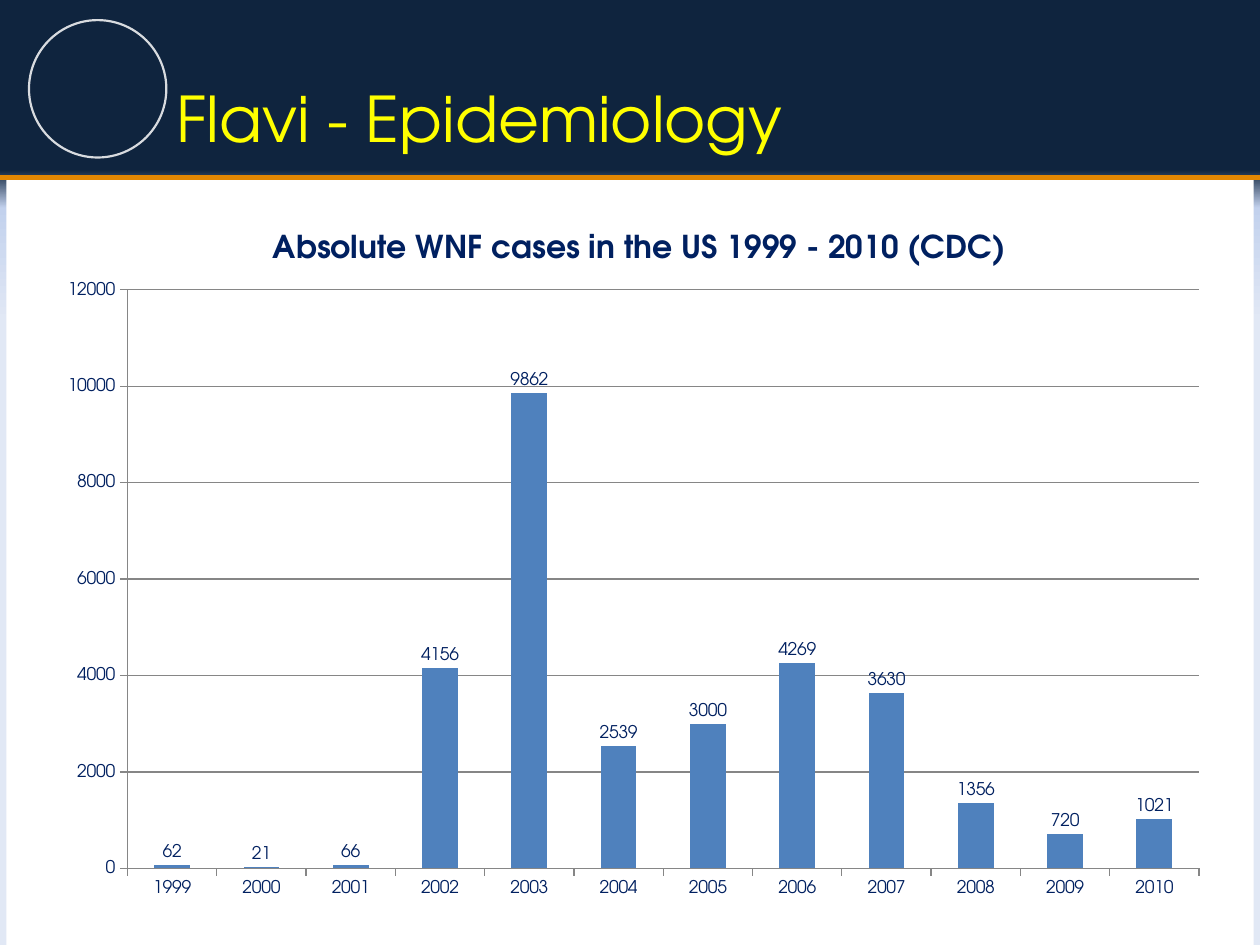
"""Build the slide on West Nile fever cases in the US."""
from dataclasses import dataclass

from lxml import etree
from pptx import Presentation
from pptx.chart.data import CategoryChartData
from pptx.dml.color import RGBColor
from pptx.enum import chart as ch, shapes, text
from pptx.oxml import ns
from pptx.util import Inches, Pt

FONT = "TeX Gyre Adventor"
COLORS = {"navy": "0F243E", "sky": "C2D1ED", "pale": "E1E8F5", "orange": "E38803",
          "white": "FFFFFF", "yellow": "FFFF00", "ink": "002060", "bar": "4F81BD",
          "grid": "868686"}
BACKDROP_STOPS = ((18, "navy"), (22, "sky"), (34, "pale"))
CASES = {1999: 62, 2000: 21, 2001: 66, 2002: 4156, 2003: 9862, 2004: 2539,
         2005: 3000, 2006: 4269, 2007: 3630, 2008: 1356, 2009: 720, 2010: 1021}


@dataclass(frozen=True)
class Box:
    left: float
    top: float
    width: float
    height: float

    def lengths(self) -> tuple:
        return tuple(Inches(v) for v in (self.left, self.top, self.width, self.height))


@dataclass(frozen=True)
class Panel:
    preset: int
    box: Box
    fill: str = ""
    line: str = ""


def rgb(name: str) -> RGBColor:
    return RGBColor.from_string(COLORS[name])


def add(parent, tag: str, **attributes: str):
    return etree.SubElement(parent, ns.qn(tag), attributes)


def style_font(font, size: float, color: str, bold: bool = False) -> None:
    font.name, font.size, font.bold = FONT, Pt(size), bold
    font.color.rgb = rgb(color)


def paint_backdrop(slide) -> None:
    fill = slide.background.fill
    fill.gradient()
    fill.gradient_angle = 270
    stops = next(slide.element.iter(ns.qn("a:gsLst")))
    for stop in list(stops):
        stops.remove(stop)
    for percent, name in BACKDROP_STOPS:
        stop = add(stops, "a:gs", pos=str(percent * 1000))
        add(stop, "a:srgbClr", val=COLORS[name])


def add_panel(slide, panel: Panel) -> None:
    shape = slide.shapes.add_shape(panel.preset, *panel.box.lengths())
    shape.shadow.inherit = False
    if panel.fill:
        shape.fill.solid()
        shape.fill.fore_color.rgb = rgb(panel.fill)
    else:
        shape.fill.background()
    if panel.line:
        shape.line.color.rgb = rgb(panel.line)
        shape.line.width = Pt(1.25)
        color = next(shape.line._ln.iter(ns.qn("a:srgbClr")))
        add(color, "a:alpha", val="84000")
    else:
        shape.line.fill.background()


def add_rule(slide, y: float) -> None:
    rule = slide.shapes.add_connector(
        shapes.MSO_CONNECTOR.STRAIGHT, 0, Inches(y), Inches(10), Inches(y))
    rule.line.color.rgb = rgb("orange")
    rule.line.width = Pt(3)
    add(rule.element.spPr, "a:effectLst")


def set_title(slide, wording: str, box: Box) -> None:
    title = slide.shapes.title
    title.left, title.top, title.width, title.height = box.lengths()
    frame = title.text_frame
    frame.text = wording
    frame.auto_size = text.MSO_AUTO_SIZE.NONE
    frame.vertical_anchor = text.MSO_ANCHOR.MIDDLE
    heading = frame.paragraphs[0]
    heading.alignment = text.PP_ALIGN.LEFT
    style_font(heading.font, 36, "yellow")


def place_plot(chart, area: Box) -> None:
    plot_area = chart._chartSpace.chart.plotArea
    for layout in plot_area.findall(ns.qn("c:layout")):
        plot_area.remove(layout)
    layout = etree.Element(ns.qn("c:layout"))
    plot_area.insert(0, layout)
    manual = add(layout, "c:manualLayout")
    for tag, value in (("layoutTarget", "inner"), ("xMode", "edge"), ("yMode", "edge"),
                       ("x", area.left), ("y", area.top),
                       ("w", area.width), ("h", area.height)):
        add(manual, f"c:{tag}", val=str(value))


def add_case_chart(slide, box: Box) -> None:
    data = CategoryChartData()
    data.categories = [str(year) for year in CASES]
    data.add_series("Series 1", CASES.values())
    chart = slide.shapes.add_chart(
        ch.XL_CHART_TYPE.COLUMN_CLUSTERED, *box.lengths(), data).chart
    style_font(chart.font, 10, "ink")
    chart.has_legend = False
    chart.has_title = True
    heading = chart.chart_title.text_frame
    heading.text = "Absolute WNF cases in the US 1999 - 2010 (CDC)"
    style_font(heading.paragraphs[0].font, 18, "ink", bold=True)

    counts, years = chart.value_axis, chart.category_axis
    counts.minimum_scale, counts.maximum_scale, counts.major_unit = 0, 12000, 2000
    counts.has_major_gridlines = True
    for axis in (counts, years):
        axis.major_tick_mark = ch.XL_TICK_MARK.OUTSIDE
    for part in (counts, years, counts.major_gridlines):
        part.format.line.color.rgb = rgb("grid")
        part.format.line.width = Pt(0.75)

    plot = chart.plots[0]
    plot.gap_width = 150
    plot.vary_by_categories = False
    bars = plot.series[0]
    bars.format.fill.solid()
    bars.format.fill.fore_color.rgb = rgb("bar")
    labels = bars.data_labels
    labels.show_value = True
    labels.position = ch.XL_LABEL_POSITION.OUTSIDE_END
    style_font(labels.font, 10, "ink")
    place_plot(chart, Box(0.07, 0.12, 0.9, 0.81))


def main() -> None:
    deck = Presentation()
    deck.slide_width, deck.slide_height = Inches(10), Inches(7.5)
    slide = deck.slides.add_slide(deck.slide_layouts[5])
    paint_backdrop(slide)
    add_rule(slide, 1.41)
    for panel in (
        Panel(shapes.MSO_SHAPE.OVAL, Box(0.23, 0.16, 1.09, 1.09), line="white"),
        Panel(shapes.MSO_SHAPE.RECTANGLE, Box(0.05, 1.43, 9.9, 6.07), fill="white"),
    ):
        add_panel(slide, panel)
    set_title(slide, "Flavi - Epidemiology", Box(1.3, 0.68, 5.67, 0.5))
    add_case_chart(slide, Box(0.35, 1.62, 9.45, 5.67))
    deck.save("out.pptx")


if __name__ == "__main__":
    main()
